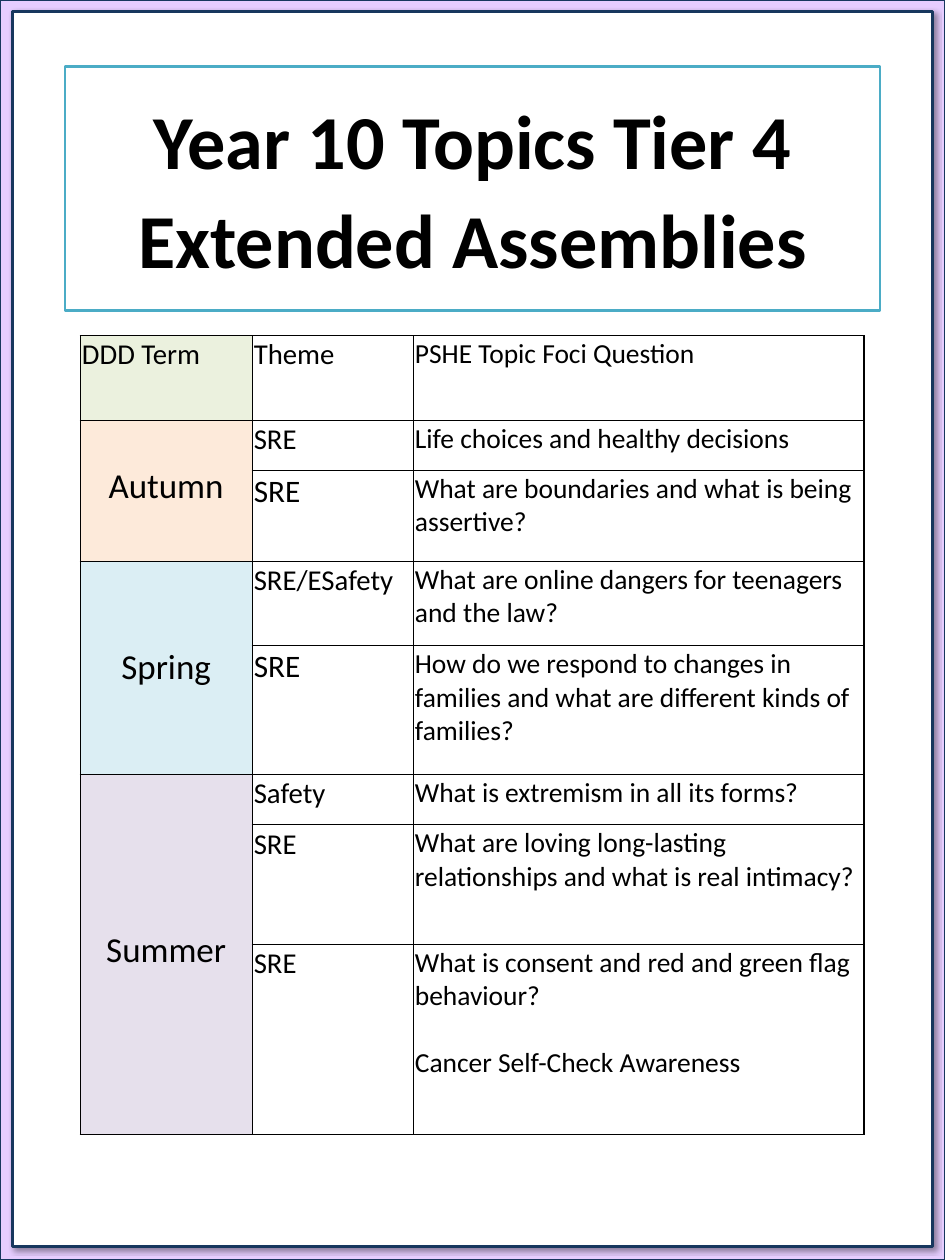
"""Build a one-page poster of the Year 10 assembly topics by term."""
from typing import NamedTuple

from lxml import etree
from pptx import Presentation
from pptx import util as u
from pptx.dml.color import RGBColor
from pptx.enum import shapes, text
from pptx.oxml import parse_xml

WIDE, HIGH = u.Inches(10.5), u.Inches(14)
FONT = "Calibri"
NS = "http://schemas.openxmlformats.org/drawingml/2006/main"
HUES = {
    "ink": "000000", "paper": "FFFFFF", "lilac": "E6CDFF", "navy": "17375E",
    "aqua": "4BACC6", "green": "EBF1DE", "peach": "FDEADA", "blue": "DBEEF4",
    "mauve": "E6E0EC",
}


class Box(NamedTuple):
    """A rectangle in percent of the slide, with its colours."""
    left: float
    top: float
    width: float
    height: float
    fill: str
    line: str
    weight: float


class Topic(NamedTuple):
    """A row of the table, with its height in percent of the slide."""
    height: float
    theme: str
    lines: list[str]
    size: float = 23


class Term(NamedTuple):
    """A term cell and the topics beside it."""
    name: str
    fill: str
    topics: list[Topic]


BACK = Box(0, 0, 100, 100, "lilac", "navy", 2.25)
PANEL = Box(1.33, 0.93, 97.33, 98, "paper", "navy", 2.25)
TITLE = Box(6.86, 5.29, 86.29, 19.36, "paper", "aqua", 2)
LEFT, TOP = 8.48, 26.64
COLS = [18.19, 17.05, 47.71]
TERMS = [
    Term("DDD Term", "green", [
        Topic(6.71, "Theme", ["PSHE Topic Foci Question"])]),
    Term("Autumn", "peach", [
        Topic(4, "SRE", ["Life choices and healthy decisions"]),
        Topic(7.21, "SRE", ["What are boundaries and what is being assertive?"], 25)]),
    Term("Spring", "blue", [
        Topic(6.71, "SRE/ESafety", ["What are online dangers for teenagers and the law?"]),
        Topic(10.21, "SRE", ["How do we respond to changes in families and what are "
                             "different kinds of families?"], 25)]),
    Term("Summer", "mauve", [
        Topic(4, "Safety", ["What is extremism in all its forms?"]),
        Topic(9.5, "SRE", ["What are loving long-lasting relationships and what is "
                           "real intimacy?"]),
        Topic(15.07, "SRE", ["What is consent and red and green flag behaviour?",
                             "Cancer Self-Check Awareness"])]),
]


def across(share: float) -> int:
    """Turn percent of the slide's width into a length."""
    return round(WIDE * share / 100)


def down(share: float) -> int:
    """Turn percent of the slide's height into a length."""
    return round(HIGH * share / 100)


def hue(name: str) -> RGBColor:
    """Look up a colour."""
    return RGBColor.from_string(HUES[name])


def write(frame, lines: list[str], *, size: float, bold: bool = False,
          mid: bool = False, gap: float = 0, after: float = 0) -> None:
    """Write one paragraph per line, in one format."""
    frame.word_wrap = True
    for i, line in enumerate(lines):
        para = frame.add_paragraph() if i else frame.paragraphs[0]
        para.alignment = text.PP_ALIGN.CENTER if mid else text.PP_ALIGN.LEFT
        para.space_before = u.Pt(gap if i else 0)
        para.space_after = u.Pt(after)
        run = para.add_run()
        run.text = line
        font = run.font
        font.name, font.size, font.bold = FONT, u.Pt(size), bold
        font.color.rgb = hue("ink")


def draw(slide, box: Box):
    """Draw a filled and outlined rectangle."""
    shape = slide.shapes.add_shape(
        shapes.MSO_SHAPE.RECTANGLE, across(box.left), down(box.top),
        across(box.width), down(box.height))
    shape.shadow.inherit = False
    shape.fill.solid()
    shape.fill.fore_color.rgb = hue(box.fill)
    shape.line.color.rgb = hue(box.line)
    shape.line.width = u.Pt(box.weight)
    return shape


def shade(shape) -> None:
    """Cast a soft shadow to the lower right."""
    glow = shape._element.spPr.find(f"{{{NS}}}effectLst")
    glow.append(parse_xml(
        f'<a:outerShdw xmlns:a="{NS}" blurRad="{u.Pt(4)}" dist="{u.Pt(3)}" '
        f'dir="2700000" algn="tl" rotWithShape="0"><a:srgbClr val="{HUES["ink"]}">'
        '<a:alpha val="40000"/></a:srgbClr></a:outerShdw>'))


def style(cell, fill: str | None = None) -> None:
    """Set the margins, fill and borders of a cell."""
    cell.margin_left = cell.margin_right = cell.margin_top = u.Inches(0.02)
    cell.margin_bottom = u.Inches(0.11)
    if fill:
        cell.fill.solid()
        cell.fill.fore_color.rgb = hue(fill)
    else:
        cell.fill.background()
    props = cell._tc.get_or_add_tcPr()
    for i, side in enumerate("LRTB"):
        edge = etree.Element(f"{{{NS}}}ln{side}", w=str(u.Pt(1)))
        paint = etree.SubElement(edge, f"{{{NS}}}solidFill")
        etree.SubElement(paint, f"{{{NS}}}srgbClr", val=HUES["ink"])
        props.insert(i, edge)


def fill_term(table, term: Term, first: int) -> None:
    """Fill the rows of one term, starting at the first."""
    for row, topic in enumerate(term.topics, first):
        table.rows[row].height = down(topic.height)
        name, theme, focus = (table.cell(row, col) for col in range(3))
        style(name, term.fill)
        style(theme)
        style(focus)
        write(theme.text_frame, [topic.theme], size=topic.size)
        write(focus.text_frame, topic.lines, size=22, gap=26.8)
    count = len(term.topics)
    name = table.cell(first, 0)
    span = count > 1
    if span:
        name.merge(table.cell(first + count - 1, 0))
        name.vertical_anchor = text.MSO_ANCHOR.MIDDLE
    if term.name == "Spring":
        name.margin_left = name.margin_right = name.margin_top = name.margin_bottom = 0
    write(name.text_frame, [term.name], size=28 if span else 23, mid=span)


def main() -> None:
    """Build and save the slide."""
    deck = Presentation()
    deck.slide_width, deck.slide_height = WIDE, HIGH
    slide = deck.slides.add_slide(deck.slide_layouts[6])
    draw(slide, BACK)
    shade(draw(slide, PANEL))
    title = draw(slide, TITLE).text_frame
    title.vertical_anchor = text.MSO_ANCHOR.MIDDLE
    write(title, ["Year 10 Topics Tier 4", "Extended Assemblies"],
          size=61, bold=True, mid=True, after=6)

    highs = [topic.height for term in TERMS for topic in term.topics]
    table = slide.shapes.add_table(
        len(highs), len(COLS), across(LEFT), down(TOP),
        across(sum(COLS)), down(sum(highs))).table
    table.first_row = table.horz_banding = False
    for col, share in zip(table.columns, COLS):
        col.width = across(share)
    first = 0
    for term in TERMS:
        fill_term(table, term, first)
        first += len(term.topics)
    deck.save("out.pptx")


if __name__ == "__main__":
    main()
